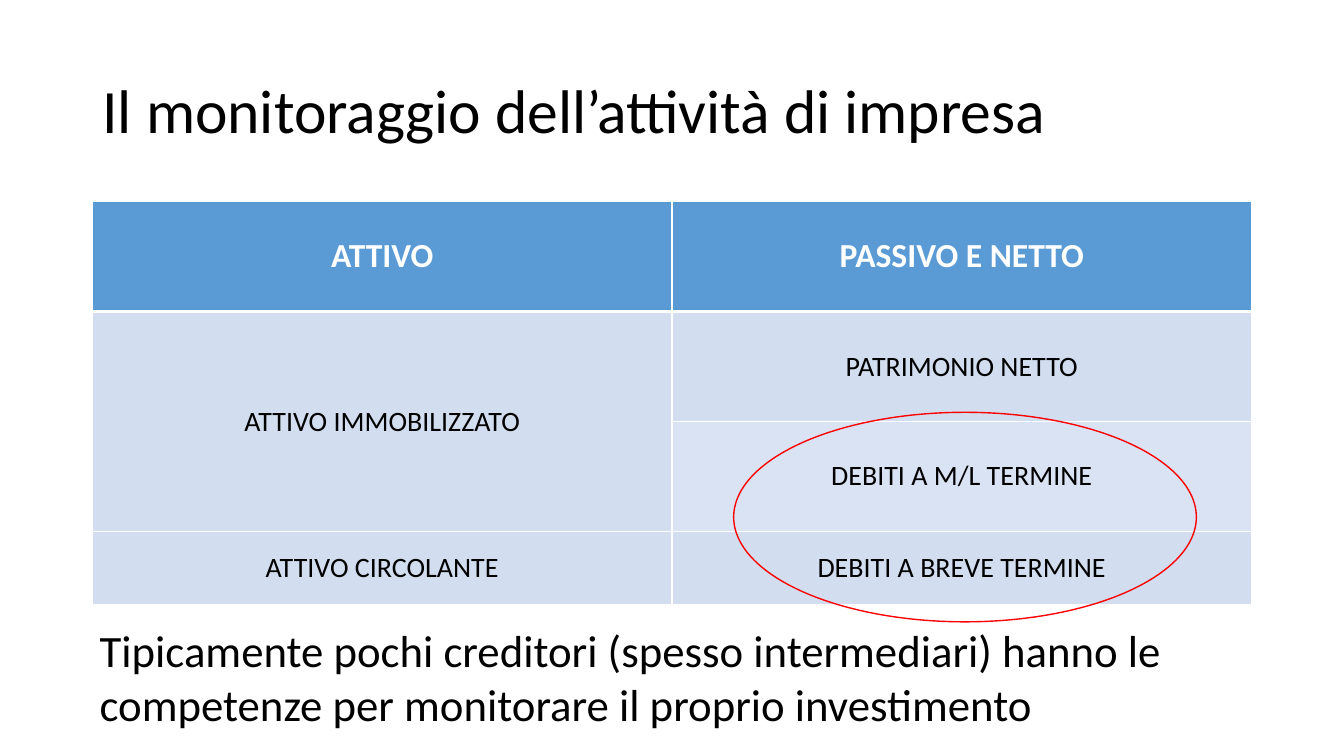
from dataclasses import dataclass

from lxml.etree import SubElement
from pptx import Presentation
from pptx.dml.color import RGBColor
from pptx.enum.shapes import MSO_SHAPE
from pptx.enum.text import MSO_ANCHOR, MSO_AUTO_SIZE, PP_ALIGN
from pptx.oxml.ns import qn
from pptx.util import Cm, Pt


@dataclass(frozen=True)
class Theme:
    font: str = "Calibri"
    ink: str = "000000"
    paper: str = "FFFFFF"
    header: str = "5B9BD5"
    band: str = "D2DEEF"
    light_band: str = "DAE3F3"
    highlight: str = "FF0000"
    title_size: int = 44
    note_size: int = 32
    header_size: int = 24
    cell_size: int = 20
    thin: int = 1
    thick: int = 3


class SlideBuilder:
    def __init__(self, deck, theme):
        self.theme = theme
        self.page = deck.slides.add_slide(deck.slide_layouts[5])

    def add_text(self, frame, text, size, color, bold=False, align=PP_ALIGN.LEFT):
        para = frame.paragraphs[0]
        para.alignment = align
        span = para.add_run()
        span.text = text
        span.font.name = self.theme.font
        span.font.size = Pt(size)
        span.font.bold = bold
        span.font.color.rgb = RGBColor.from_string(color)
        return para

    def title(self, text, left, top, width, height):
        box = self.page.shapes.title
        box.left, box.top, box.width, box.height = Cm(left), Cm(top), Cm(width), Cm(height)
        box.text_frame.auto_size = MSO_AUTO_SIZE.NONE
        box.text_frame.vertical_anchor = MSO_ANCHOR.MIDDLE
        para = self.add_text(box.text_frame, text, self.theme.title_size, self.theme.ink)
        para.line_spacing = 0.9

    def note(self, text, left, top, width, height):
        box = self.page.shapes.add_textbox(Cm(left), Cm(top), Cm(width), Cm(height))
        box.text_frame.word_wrap = True
        box.text_frame.auto_size = MSO_AUTO_SIZE.SHAPE_TO_FIT_TEXT
        self.add_text(box.text_frame, text, self.theme.note_size, self.theme.ink)

    def ring(self, left, top, width, height):
        ring = self.page.shapes.add_shape(
            MSO_SHAPE.OVAL, Cm(left), Cm(top), Cm(width), Cm(height))
        ring.shadow.inherit = False
        ring.fill.background()
        ring.line.color.rgb = RGBColor.from_string(self.theme.highlight)
        ring.line.width = Pt(self.theme.thin)

    def border(self, cell, side, width):
        line = SubElement(cell._tc.get_or_add_tcPr(), qn(f"a:ln{side}"), w=str(Pt(width)))
        fill = SubElement(line, qn("a:solidFill"))
        SubElement(fill, qn("a:srgbClr"), val=self.theme.paper)

    def style_cell(self, cell, row, color):
        for side in "LRTB":
            under_header = (row, side) in ((0, "B"), (1, "T"))
            self.border(cell, side, self.theme.thick if under_header else self.theme.thin)
        cell.fill.solid()
        cell.fill.fore_color.rgb = RGBColor.from_string(color)
        cell.vertical_anchor = MSO_ANCHOR.MIDDLE

    def balance_sheet(self, rows, fills, heights, left, top, width):
        theme = self.theme
        columns = len(rows[0])
        table = self.page.shapes.add_table(
            len(rows), columns, Cm(left), Cm(top), Cm(width), Cm(sum(heights))).table
        for column in table.columns:
            column.width = Cm(width / columns)
        for row, (texts, fill, height) in enumerate(zip(rows, fills, heights)):
            table.rows[row].height = Cm(height)
            for column, text in enumerate(texts):
                cell = table.cell(row, column)
                self.style_cell(cell, row, fill)
                if text is None:
                    table.cell(row - 1, column).merge(cell)
                    continue
                size, color = ((theme.header_size, theme.paper) if row == 0
                               else (theme.cell_size, theme.ink))
                self.add_text(cell.text_frame, text, size, color, row == 0, PP_ALIGN.CENTER)


def main():
    deck = Presentation()
    deck.slide_width, deck.slide_height = Cm(33.87), Cm(19.05)
    theme = Theme()
    slide = SlideBuilder(deck, theme)
    slide.title("Il monitoraggio dell’attività di impresa", 2.33, 1.02, 29.21, 3.68)
    slide.balance_sheet(
        rows=[
            ("ATTIVO", "PASSIVO E NETTO"),
            ("ATTIVO IMMOBILIZZATO", "PATRIMONIO NETTO"),
            (None, "DEBITI A M/L TERMINE"),
            ("ATTIVO CIRCOLANTE", "DEBITI A BREVE TERMINE"),
        ],
        fills=[theme.header, theme.band, theme.light_band, theme.band],
        heights=[2.77, 2.77, 2.77, 1.85],
        left=2.33, top=5.08, width=29.21)
    slide.note(
        "Tipicamente pochi creditori (spesso intermediari) hanno le competenze "
        "per monitorare il proprio investimento", 2.26, 15.57, 30.96, 3)
    slide.ring(18.49, 10.39, 11.66, 5.28)
    deck.save("out.pptx")


if __name__ == "__main__":
    main()
